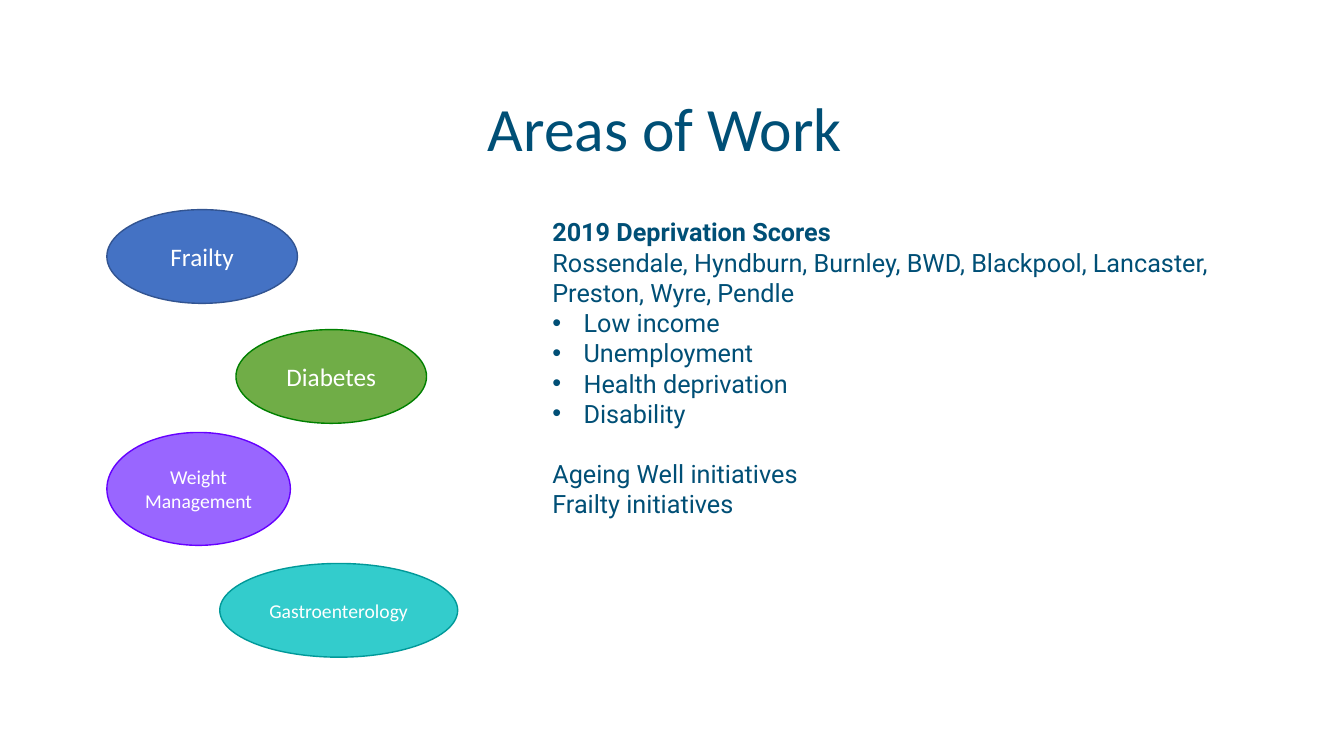
"""Build the Areas of Work slide."""
from lxml import etree
from pptx import Presentation
from pptx.dml.color import RGBColor as RGB
from pptx.enum.shapes import MSO_SHAPE as SHAPE
from pptx.enum.text import MSO_ANCHOR as ANCHOR, PP_ALIGN as ALIGN
from pptx.oxml.ns import qn
from pptx.util import Inches, Pt

NAVY, WHITE = RGB(0x00, 0x4F, 0x76), RGB(0xFF, 0xFF, 0xFF)
BLUE, DARK_BLUE = RGB(0x44, 0x72, 0xC4), RGB(0x32, 0x54, 0x91)
GREEN, DARK_GREEN = RGB(0x70, 0xAD, 0x47), RGB(0x00, 0x80, 0x00)
PURPLE, DARK_PURPLE = RGB(0x99, 0x66, 0xFF), RGB(0x66, 0x00, 0xFF)
TEAL, DARK_TEAL = RGB(0x33, 0xCC, 0xCC), RGB(0x00, 0x99, 0x99)

WIDTH, HEIGHT = 13.33, 7.5
MARGIN = 0.67
INDENT = 0.31
TITLE = "Areas of Work"
AREAS = [
    ("Frailty", 18, BLUE, DARK_BLUE, (1.06, 2.08, 1.89, 0.93)),
    ("Diabetes", 18, GREEN, DARK_GREEN, (2.34, 3.27, 1.89, 0.93)),
    ("Weight Management", 14, PURPLE, DARK_PURPLE, (1.06, 4.29, 1.82, 1.12)),
    ("Gastroenterology", 14, TEAL, DARK_TEAL, (2.18, 5.59, 2.36, 0.93)),
]
HEADING, PLAIN, BULLET, GAP = "heading", "plain", "bullet", "gap"
DETAILS = [
    (HEADING, "2019 Deprivation Scores"),
    (PLAIN, "Rossendale, Hyndburn, Burnley, BWD, Blackpool, Lancaster, "
            "Preston, Wyre, Pendle"),
    (BULLET, "Low income"),
    (BULLET, "Unemployment"),
    (BULLET, "Health deprivation"),
    (BULLET, "Disability"),
    (GAP, "Ageing Well initiatives"),
    (PLAIN, "Frailty initiatives"),
]


def write(p, text, **font):
    r = p.add_run()
    r.text = text
    color = font.pop("color")
    for name, value in font.items():
        setattr(r.font, name, value)
    r.font.color.rgb = color


def add_bullet(p):
    pPr = p._p.get_or_add_pPr()
    pPr.set("marL", str(Inches(INDENT)))
    pPr.set("indent", str(-Inches(INDENT)))
    etree.SubElement(pPr, qn("a:buFont")).set("typeface", "Arial")
    etree.SubElement(pPr, qn("a:buChar")).set("char", "•")


def add_box(s, *box):
    tf = s.shapes.add_textbox(*map(Inches, box)).text_frame
    tf.word_wrap = True
    return tf


def add_title(s):
    tf = add_box(s, MARGIN, 0.84, WIDTH - 2 * MARGIN, 0.94)
    tf.vertical_anchor = ANCHOR.MIDDLE
    tf.margin_right = Inches(0.24)
    p = tf.paragraphs[0]
    p.alignment = ALIGN.CENTER
    p.line_spacing = 0.9
    write(p, TITLE, name="Calibri", size=Pt(44), color=NAVY)


def add_area(s, text, size, fill, line, box):
    sp = s.shapes.add_shape(SHAPE.OVAL, *map(Inches, box))
    sp.shadow.inherit = False
    sp.fill.solid()
    sp.fill.fore_color.rgb = fill
    sp.line.color.rgb = line
    sp.line.width = Pt(1)
    tf = sp.text_frame
    tf.word_wrap = True
    tf.vertical_anchor = ANCHOR.MIDDLE
    p = tf.paragraphs[0]
    p.alignment = ALIGN.CENTER
    write(p, text, name="Calibri", size=Pt(size), color=WHITE)


def add_details(s):
    tf = add_box(s, 5.38, 2.1, 6.89, 3.13)
    for i, (kind, text) in enumerate(DETAILS):
        p = tf.add_paragraph() if i else tf.paragraphs[0]
        if kind == BULLET:
            add_bullet(p)
        elif kind == GAP:
            p.space_before = Pt(21.5)
        write(p, text, name="Roboto", size=Pt(18), bold=kind == HEADING, color=NAVY)


def main():
    prs = Presentation()
    prs.slide_width, prs.slide_height = Inches(WIDTH), Inches(HEIGHT)
    s = prs.slides.add_slide(prs.slide_layouts[6])
    add_title(s)
    for area in AREAS:
        add_area(s, *area)
    add_details(s)
    prs.save("out.pptx")


if __name__ == "__main__":
    main()
